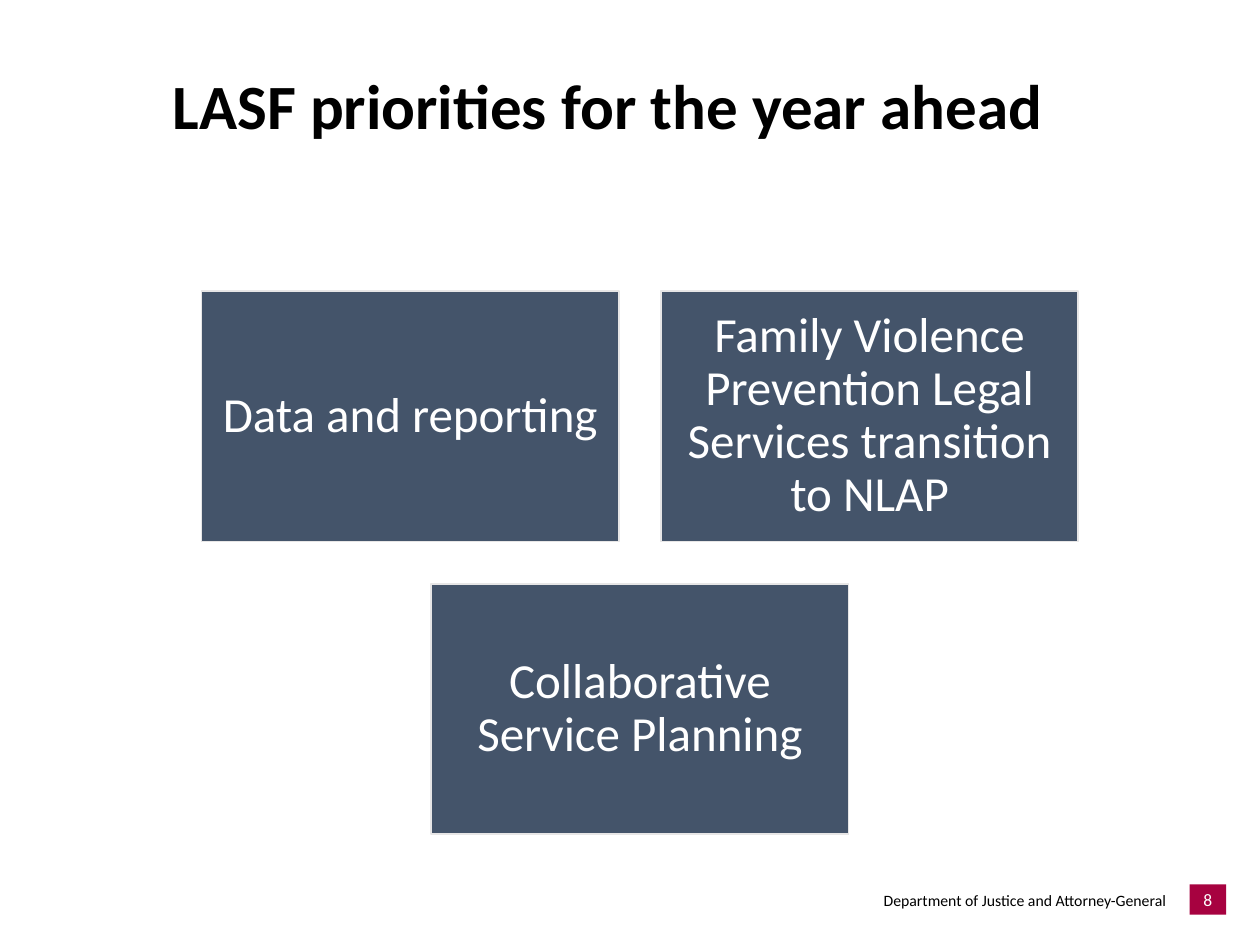
from pptx import Presentation
from pptx.dml.color import RGBColor
from pptx.enum.shapes import MSO_SHAPE as Shape
from pptx.enum.text import MSO_ANCHOR as Anchor, PP_ALIGN as Align
from pptx.util import Cm, Pt

COLORS = {
    "text": "000000",
    "light": "FFFFFF",
    "box": "44546A",
    "border": "E7E6E6",
    "badge": "A70240",
}


class SlideBuilder:
    """Holds the style and the current slide."""

    font = "Calibri"

    def __init__(self, slide):
        self.s = slide

    def color(self, name):
        return RGBColor.from_string(COLORS[name])

    def add_text(self, sp, text, size, color, align, spacing=0.9, bold=False, inset=None):
        tf = sp.text_frame
        tf.word_wrap = True
        tf.vertical_anchor = Anchor.MIDDLE
        if inset is not None:
            tf.margin_left = tf.margin_right = Cm(inset)
            tf.margin_top = tf.margin_bottom = Cm(inset)
        p = tf.paragraphs[0]
        p.alignment = align
        p.line_spacing = spacing
        r = p.add_run()
        r.text = text
        r.font.name = self.font
        r.font.size = Pt(size)
        r.font.bold = bold
        r.font.color.rgb = self.color(color)

    def label(self, at, text, size, **style):
        sp = self.s.shapes.add_textbox(*map(Cm, at))
        self.add_text(sp, text, size, "text", **style)

    def box(self, at, text, size, fill, border=None, **style):
        sp = self.s.shapes.add_shape(Shape.RECTANGLE, *map(Cm, at))
        sp.shadow.inherit = False
        sp.fill.solid()
        sp.fill.fore_color.rgb = self.color(fill)
        if border:
            sp.line.color.rgb = self.color(border)
            sp.line.width = Pt(1)
        else:
            sp.line.fill.background()
        self.add_text(sp, text, size, "light", align=Align.CENTER, **style)


def main():
    prs = Presentation()
    prs.slide_width, prs.slide_height = Cm(25.4), Cm(19.05)
    b = SlideBuilder(prs.slides.add_slide(prs.slide_layouts[6]))

    # Title
    b.label((3.23, 0.81, 19.41, 2.79), "LASF priorities for the year ahead", 36,
            align=Align.LEFT, bold=True)

    # Footer and slide number
    b.label((9.37, 17.86, 14.38, 0.61), "Department of Justice and Attorney-General", 9,
            align=Align.RIGHT)
    b.box((23.98, 17.83, 0.74, 0.61), "8", 10, "badge", spacing=1.0, inset=0)

    # Priorities: two columns, each row centred
    rows = [
        ["Data and reporting",
         "Family Violence Prevention Legal Services transition to NLAP"],
        ["Collaborative Service Planning"],
    ]
    width, height, gap = 8.41, 5.05, 0.85
    center, top = 12.9, 5.87
    for i, row in enumerate(rows):
        left = center - (len(row) * (width + gap) - gap) / 2
        for j, text in enumerate(row):
            at = (left + j * (width + gap), top + i * (height + gap), width, height)
            b.box(at, text, 28, "box", border="border", inset=0.3)

    prs.save("out.pptx")


if __name__ == "__main__":
    main()
